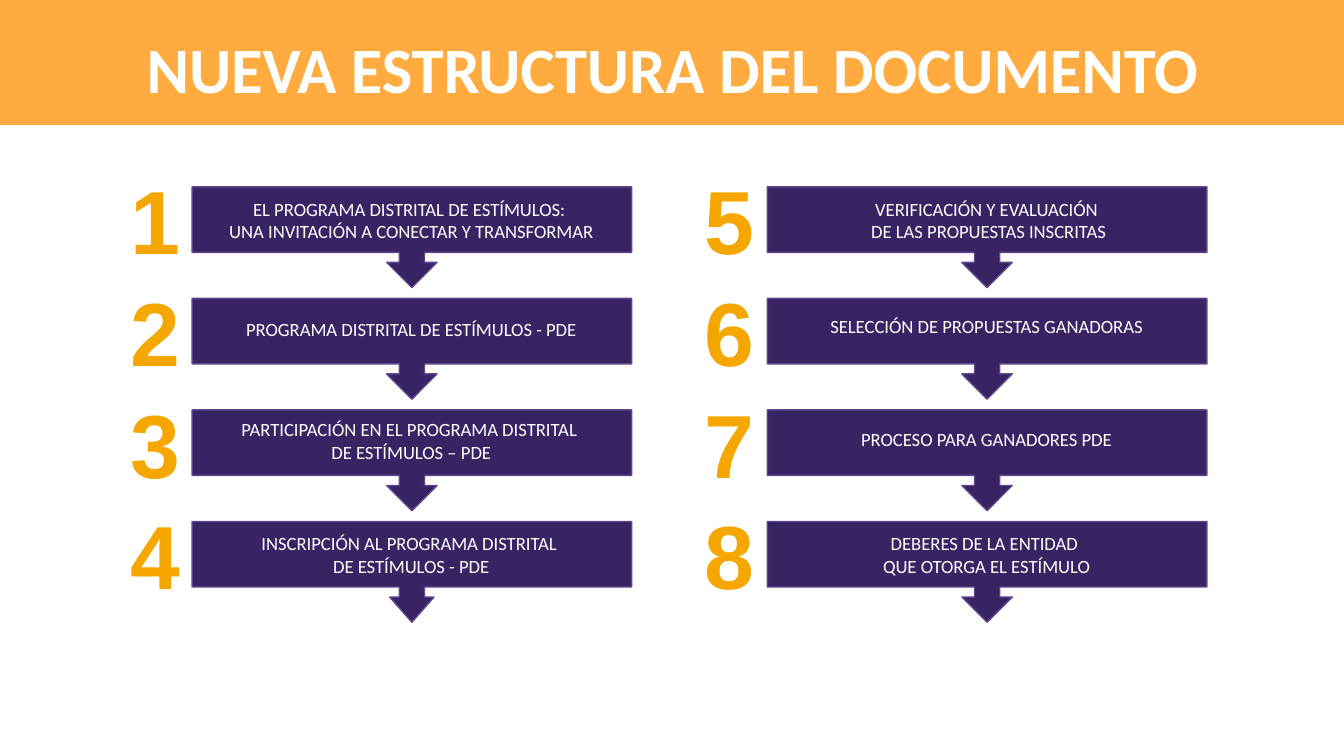
from pptx import Presentation
from pptx.dml.color import RGBColor
from pptx.enum.shapes import MSO_SHAPE as SHAPE
from pptx.enum.text import MSO_ANCHOR as ANCHOR, MSO_AUTO_SIZE as AUTO, PP_ALIGN as ALIGN
from pptx.util import Inches, Pt

WHITE = RGBColor(0xFF, 0xFF, 0xFF)
ORANGE = RGBColor(0xFF, 0xAB, 0x40)
AMBER = RGBColor(0xF5, 0xA7, 0x00)
PURPLE = RGBColor(0x38, 0x23, 0x63)
VIOLET = RGBColor(0x5E, 0x46, 0x8F)

TITLE = "NUEVA ESTRUCTURA DEL DOCUMENTO"
SECTIONS = [  # top of the label, lines of the label
    (1.37, ["EL PROGRAMA DISTRITAL DE ESTÍMULOS: ", "UNA INVITACIÓN A CONECTAR Y TRANSFORMAR"]),
    (2.28, ["PROGRAMA DISTRITAL DE ESTÍMULOS - PDE"]),
    (3.01, ["PARTICIPACIÓN EN EL PROGRAMA DISTRITAL ", "DE ESTÍMULOS – PDE"]),
    (3.86, ["INSCRIPCIÓN AL PROGRAMA DISTRITAL ", "DE ESTÍMULOS - PDE"]),
    (1.37, ["VERIFICACIÓN Y EVALUACIÓN", " DE LAS PROPUESTAS INSCRITAS"]),
    (2.26, ["SELECCIÓN DE PROPUESTAS GANADORAS"]),
    (3.10, ["PROCESO PARA GANADORES PDE"]),
    (3.86, ["DEBERES DE LA ENTIDAD ", "QUE OTORGA EL ESTÍMULO"]),
]
NARROW_ARROWS = {4: 0.22}  # section number: half-width of its arrowhead

TITLE_FONT = dict(name="Calibri", size=Pt(34.6), bold=True)
LABEL_FONT = dict(name="Calibri", size=Pt(10))
NUMBER_FONT = dict(name="Arial", size=Pt(48), bold=True)

SLIDE_W = Inches(10)
SLIDE_H = SLIDE_W * 9 // 16
ROWS, TOP, PITCH = 4, 1.39, 0.83
COLUMNS = [(0.87, 1.43), (5.14, 5.71)]  # left of the numbers, left of the callouts
CALLOUT_W, CALLOUT_H = 3.27, 0.75


def write(tf, lines, font, color, align):
    tf.word_wrap = True
    for side in ("left", "right", "top", "bottom"):
        setattr(tf, f"margin_{side}", Inches(0.1))
    for i, line in enumerate(lines):
        p = tf.paragraphs[0] if i == 0 else tf.add_paragraph()
        p.alignment = align
        r = p.add_run()
        r.text = line
        for key, value in font.items():
            setattr(r.font, key, value)
        r.font.color.rgb = color


def add_filled(s, kind, box, color):
    sp = s.shapes.add_shape(kind, *map(Inches, box))
    sp.shadow.inherit = False
    sp.fill.solid()
    sp.fill.fore_color.rgb = color
    sp.line.fill.background()
    return sp


def add_text(s, box, lines, font, color, align):
    tf = s.shapes.add_textbox(*map(Inches, box)).text_frame
    write(tf, lines, font, color, align)
    tf.auto_size = AUTO.SHAPE_TO_FIT_TEXT


def add_section(s, number, label_y, lines):
    col, row = divmod(number - 1, ROWS)
    number_x, x = COLUMNS[col]
    y = TOP + row * PITCH

    callout = add_filled(s, SHAPE.DOWN_ARROW_CALLOUT, (x, y, CALLOUT_W, CALLOUT_H), PURPLE)
    callout.line.color.rgb = VIOLET
    callout.line.width = Pt(0.75)
    head = NARROW_ARROWS.get(number, 0.25)
    for i, value in enumerate((0.25, head, 0.25, 0.65)):
        callout.adjustments[i] = value

    height = 0.2 + 0.17 * len(lines)
    add_text(s, (x + 0.1, label_y, 3.06, height), lines, LABEL_FONT, WHITE, ALIGN.CENTER)
    add_text(s, (number_x, y - 0.26, 0.43, 1.01), [str(number)], NUMBER_FONT, AMBER, ALIGN.LEFT)


def main():
    prs = Presentation()
    prs.slide_width, prs.slide_height = SLIDE_W, SLIDE_H
    s = prs.slides.add_slide(prs.slide_layouts[5])

    band = add_filled(s, SHAPE.RECTANGLE, (0, 0, 10, 0.93), ORANGE)
    title = s.shapes.title
    title.left, title.top, title.width, title.height = map(Inches, (0.99, 0.2, 8.71, 0.6))
    title._element.addprevious(band._element)  # the band lies behind the title
    write(title.text_frame, [TITLE], TITLE_FONT, WHITE, ALIGN.LEFT)
    title.text_frame.vertical_anchor = ANCHOR.MIDDLE
    title.text_frame.auto_size = AUTO.NONE

    for number, (label_y, lines) in enumerate(SECTIONS, 1):
        add_section(s, number, label_y, lines)
    prs.save("out.pptx")


if __name__ == "__main__":
    main()
